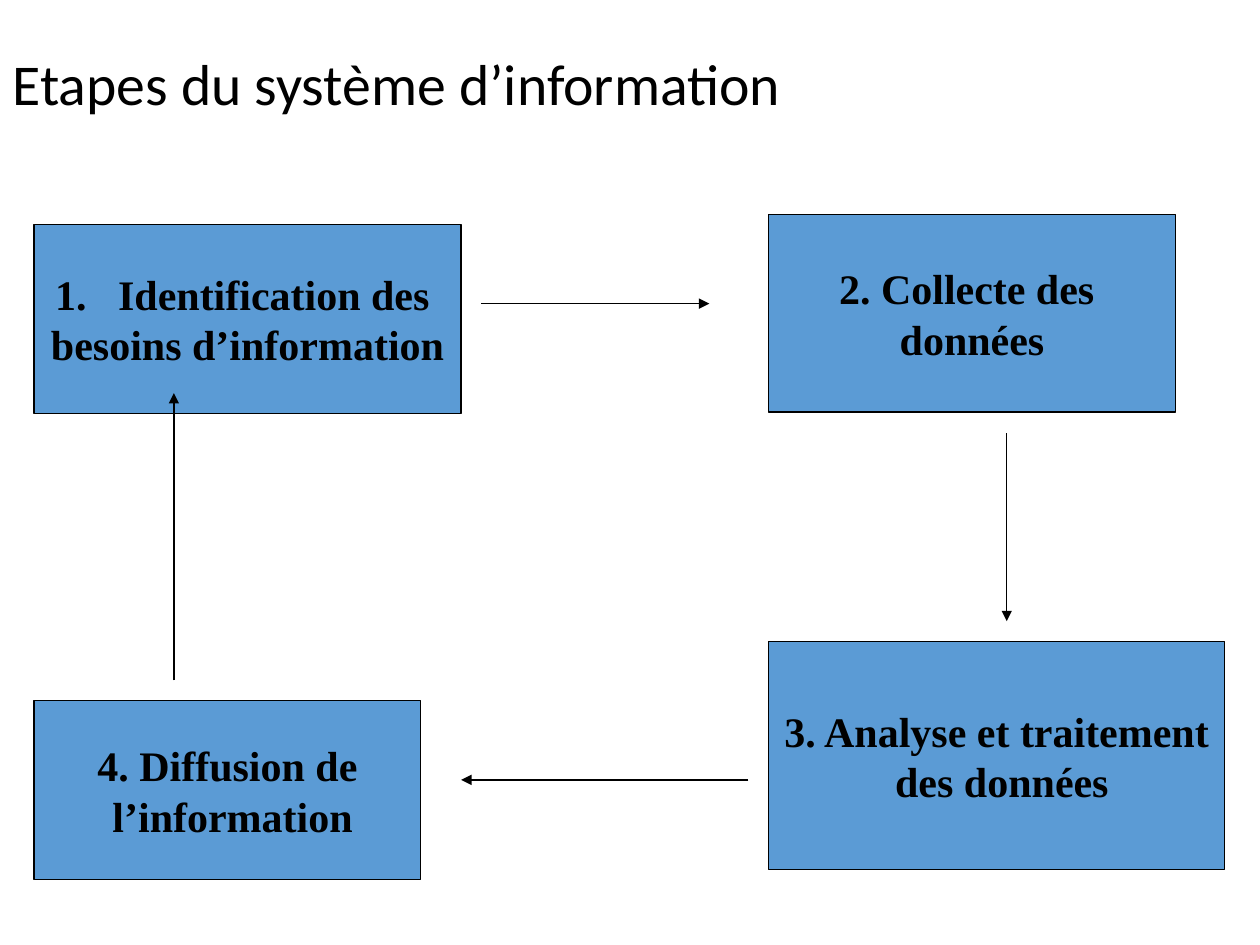
from lxml import etree
from pptx import Presentation
from pptx.dml.color import RGBColor
from pptx.enum.shapes import MSO_CONNECTOR, MSO_SHAPE
from pptx.enum.text import MSO_ANCHOR, PP_ALIGN
from pptx.oxml.ns import qn
from pptx.util import Inches, Pt

COLORS = {"box": "5B9BD5", "ink": "000000"}
INK = RGBColor.from_string(COLORS["ink"])
TITLE_FONT = {"name": "Calibri", "size": Pt(33), "bold": False}
BOX_FONT = {"name": "Times New Roman", "size": Pt(24), "bold": True}


def format_font(font, values):
    for key, value in values.items():
        setattr(font, key, value)
    font.color.rgb = INK


prs = Presentation()
prs.slide_width, prs.slide_height = Inches(10), Inches(7.5)
s = prs.slides.add_slide(prs.slide_layouts[5])

title = s.shapes.title
title_box = {"left": 0, "top": 0.28, "width": 9.37, "height": 0.81}
for key, value in title_box.items():
    setattr(title, key, Inches(value))
tf = title.text_frame
tf.vertical_anchor = MSO_ANCHOR.MIDDLE
p = tf.paragraphs[0]
p.alignment = PP_ALIGN.LEFT
p.line_spacing = 0.9
r = p.add_run()
r.text = "Etapes du système d’information"
format_font(r.font, TITLE_FONT)

steps = [
    (0.27, 1.78, 3.39, 1.5, ["Identification des ", "besoins d’information"], True),
    (6.1, 1.7, 3.23, 1.57, ["2. Collecte des ", "données"], False),
    (0.27, 5.56, 3.07, 1.42, ["4. Diffusion de", " l’information"], False),
    (6.1, 5.09, 3.62, 1.81, ["3. Analyse et traitement", " des données"], False),
]
for x, y, w, h, lines, numbered in steps:
    sp = s.shapes.add_shape(MSO_SHAPE.RECTANGLE, Inches(x), Inches(y), Inches(w), Inches(h))
    sp.shadow.inherit = False
    sp.fill.solid()
    sp.fill.fore_color.rgb = RGBColor.from_string(COLORS["box"])
    sp.line.color.rgb = INK
    sp.line.width = Pt(0.75)
    tf = sp.text_frame
    tf.word_wrap = False
    tf.vertical_anchor = MSO_ANCHOR.MIDDLE
    for i, line in enumerate(lines):
        p = tf.paragraphs[0] if i == 0 else tf.add_paragraph()
        p.alignment = PP_ALIGN.CENTER
        r = p.add_run()
        r.text = line
        format_font(r.font, BOX_FONT)
        if numbered:
            pPr = p._p.get_or_add_pPr()
            pPr.set("marL", str(Inches(0.5)))
            pPr.set("indent", str(-Inches(0.5)))
            if i == 0:
                etree.SubElement(pPr, qn("a:buAutoNum"), type="arabicPeriod")
            else:
                etree.SubElement(pPr, qn("a:buNone"))

arrows = [
    (3.82, 2.41, 5.63, 2.41),
    (7.99, 3.44, 7.99, 4.93),
    (5.94, 6.19, 3.66, 6.19),
    (1.38, 5.4, 1.38, 3.12),
]
for ends in arrows:
    arrow = s.shapes.add_connector(MSO_CONNECTOR.STRAIGHT, *map(Inches, ends))
    arrow.line.color.rgb = INK
    arrow.line.width = Pt(0.75)
    etree.SubElement(arrow.line._get_or_add_ln(), qn("a:tailEnd"), type="triangle")
    etree.SubElement(arrow._element.spPr, qn("a:effectLst"))

prs.save("out.pptx")
